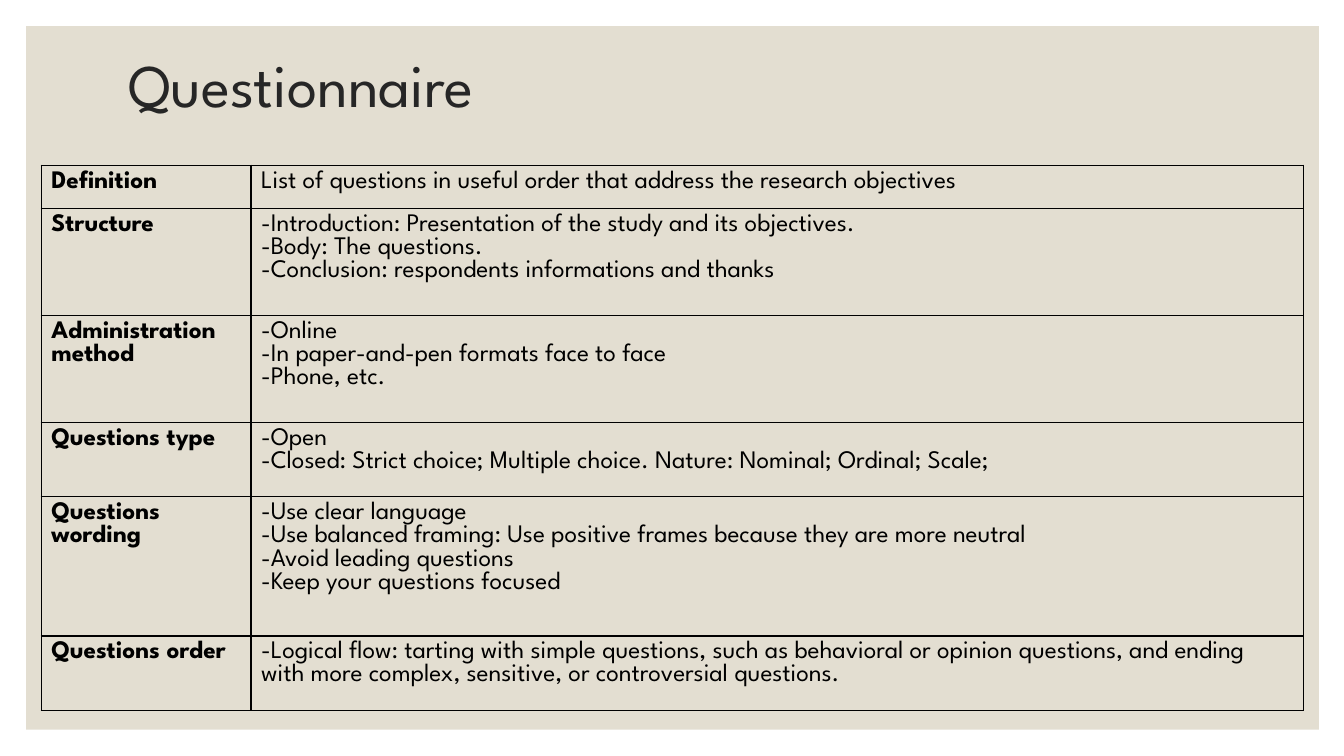
from lxml import etree
from pptx import Presentation
from pptx.dml.color import RGBColor
from pptx.enum.shapes import MSO_SHAPE
from pptx.enum.text import MSO_ANCHOR, MSO_AUTO_SIZE, PP_ALIGN
from pptx.oxml.ns import qn
from pptx.util import Inches, Pt

RECTANGLE = MSO_SHAPE.RECTANGLE
LEFT = PP_ALIGN.LEFT
TOP, MIDDLE = MSO_ANCHOR.TOP, MSO_ANCHOR.MIDDLE
NO_AUTOFIT = MSO_AUTO_SIZE.NONE

FONT = "League Spartan"
COLORS = {"panel": "E3DED1", "title": "262626", "text": "000000", "border": "000000"}
TITLE_ONLY = 5
COLUMN_WIDTHS = [2.08, 10.44]

# Row height, heading, lines of detail
ROWS = [
    (0.43, "Definition", [
        "List of questions in useful order that address the research objectives",
    ]),
    (1.06, "Structure", [
        "-Introduction: Presentation of the study and its objectives.",
        "-Body: The questions.",
        "-Conclusion: respondents informations and thanks",
    ]),
    (1.06, "Administration method", [
        "-Online",
        "-In paper-and-pen formats face to face",
        "-Phone, etc.",
    ]),
    (0.74, "Questions type", [
        "-Open",
        "-Closed: Strict choice; Multiple choice. Nature: Nominal; Ordinal; Scale;",
    ]),
    (1.38, "Questions wording", [
        "-Use clear language",
        "-Use balanced framing: Use positive frames because they are more neutral",
        "-Avoid leading questions",
        "-Keep your questions focused",
    ]),
    (0.74, "Questions order", [
        "-Logical flow: tarting with simple questions, such as behavioral or opinion "
        "questions, and ending with more complex, sensitive, or controversial questions.",
    ]),
]


def color(name):
    return RGBColor.from_string(COLORS[name])


def write_text(frame, lines, size=18, bold=False, fill="text", spacing=1.0):
    """Fill a text frame with one paragraph for each line."""
    for index, line in enumerate(lines):
        para = frame.paragraphs[0] if index == 0 else frame.add_paragraph()
        para.alignment = LEFT
        para.line_spacing = spacing
        span = para.add_run()
        span.text = line
        span.font.name = FONT
        span.font.size = Pt(size)
        span.font.bold = bold
        span.font.color.rgb = color(fill)


def add_panel(page, left, top, width, height):
    panel = page.shapes.add_shape(
        RECTANGLE, Inches(left), Inches(top), Inches(width), Inches(height))
    panel.shadow.inherit = False
    panel.fill.solid()
    panel.fill.fore_color.rgb = color("panel")
    panel.line.fill.background()
    # Put the panel behind the title
    page.shapes._spTree.insert(2, panel._element)


def set_title(page, text, left, top, width, height):
    title = page.shapes.title
    title.left, title.top = Inches(left), Inches(top)
    title.width, title.height = Inches(width), Inches(height)
    frame = title.text_frame
    frame.auto_size = NO_AUTOFIT
    frame.vertical_anchor = MIDDLE
    write_text(frame, [text], size=43.2, fill="title", spacing=0.9)


def add_borders(cell, width=1):
    properties = cell._tc.get_or_add_tcPr()
    for side in ("a:lnL", "a:lnR", "a:lnT", "a:lnB"):
        line = etree.SubElement(properties, qn(side), w=str(Pt(width)))
        fill = etree.SubElement(line, qn("a:solidFill"))
        etree.SubElement(fill, qn("a:srgbClr"), val=COLORS["border"])


def format_cell(cell, lines, **text_format):
    cell.vertical_anchor = TOP
    add_borders(cell)
    cell.fill.background()
    write_text(cell.text_frame, lines, **text_format)


def add_summary_table(page, left, top):
    heights = [height for height, _, _ in ROWS]
    table = page.shapes.add_table(
        len(ROWS), len(COLUMN_WIDTHS), Inches(left), Inches(top),
        Inches(sum(COLUMN_WIDTHS)), Inches(sum(heights))).table
    table.first_row = False
    table.horz_banding = False
    for column, width in zip(table.columns, COLUMN_WIDTHS):
        column.width = Inches(width)
    for index, (height, heading, details) in enumerate(ROWS):
        table.rows[index].height = Inches(height)
        format_cell(table.cell(index, 0), [heading], bold=True)
        format_cell(table.cell(index, 1), details)


def main():
    deck = Presentation()
    deck.slide_width, deck.slide_height = Inches(13.33), Inches(7.5)
    page = deck.slides.add_slide(deck.slide_layouts[TITLE_ONLY])
    add_panel(page, 0.26, 0.26, 12.82, 6.98)
    set_title(page, "Questionnaire", 1.17, 0.47, 11, 0.81)
    add_summary_table(page, 0.41, 1.64)
    deck.save("out.pptx")


if __name__ == "__main__":
    main()
